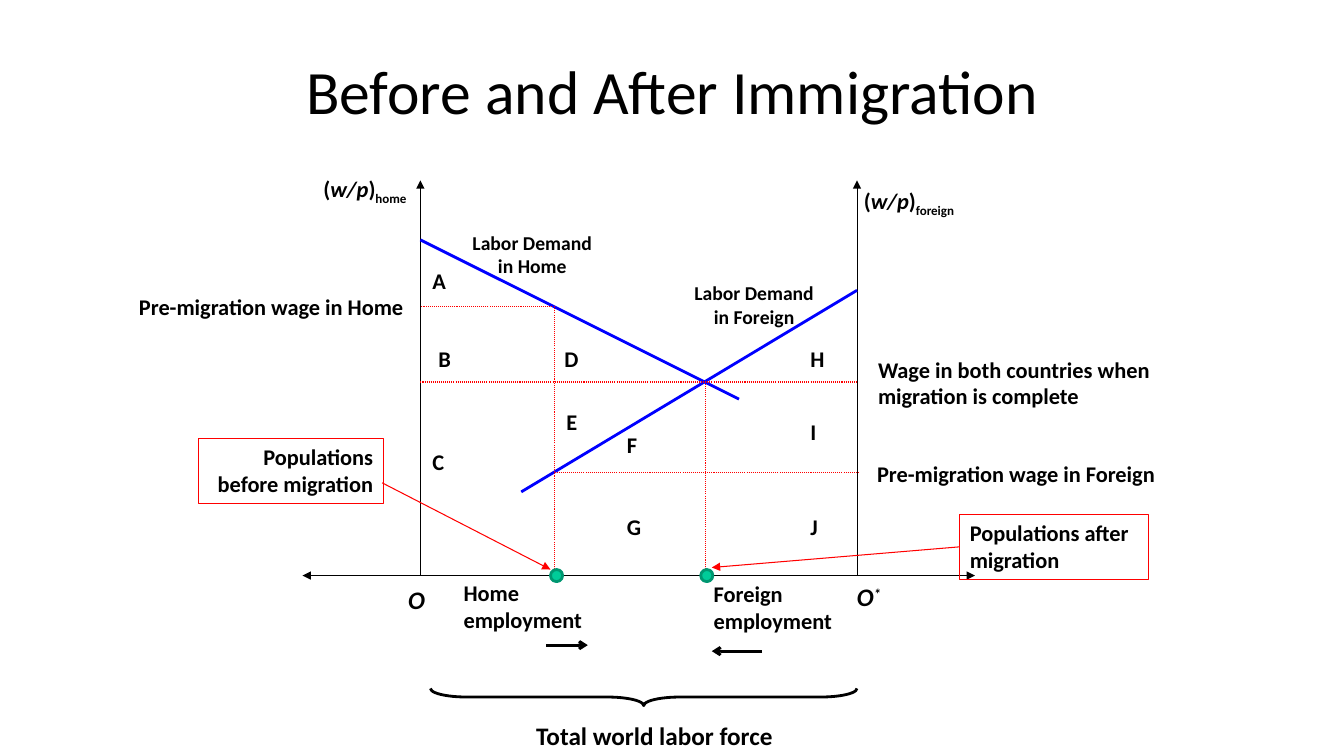
from pptx import Presentation
from pptx.dml.color import RGBColor
from pptx.enum import dml, shapes, text
from pptx.oxml import xmlchemy
from pptx.util import Inches, Pt

BLACK = RGBColor(0x00, 0x00, 0x00)
BLUE = RGBColor(0x00, 0x00, 0xFF)
RED = RGBColor(0xFF, 0x00, 0x00)
GREEN = RGBColor(0x00, 0xCC, 0x99)
DARK_GREEN = RGBColor(0x00, 0x97, 0x71)
LEFT, CENTER, RIGHT = text.PP_ALIGN.LEFT, text.PP_ALIGN.CENTER, text.PP_ALIGN.RIGHT

HOME_AXIS, FOREIGN_AXIS, BASE, AXIS_TOP = 4.17, 8.5, 5.71, 1.79
BEFORE, AFTER = 5.5, 7.0
HOME_WAGE, COMMON_WAGE, FOREIGN_WAGE = 3.04, 3.79, 4.69


class Diagram:
    font = "Calibri"

    def __init__(self, slide):
        self.shapes = slide.shapes

    def fill_text(self, sp, paragraphs, size=16, bold=True, align=LEFT, wrap=True,
                  anchor=text.MSO_ANCHOR.TOP):
        tf = sp.text_frame
        tf.word_wrap = wrap
        tf.vertical_anchor = anchor
        tf.text = "\n".join(paragraphs)
        for p in tf.paragraphs:
            p.alignment = align
            for r in p.runs:
                self.style(r, size, bold)

    def style(self, r, size, bold=True, italic=False, baseline=0):
        f = r.font
        f.name, f.size, f.bold, f.italic = self.font, Pt(size), bold, italic
        f.color.rgb = BLACK
        if baseline:
            r._r.get_or_add_rPr().set("baseline", str(baseline * 1000))

    def label(self, box, *paragraphs, **style):
        sp = self.shapes.add_textbox(*map(Inches, box))
        self.fill_text(sp, paragraphs, **style)

    def formula(self, box, parts, size=16, wrap=True):
        tf = self.shapes.add_textbox(*map(Inches, box)).text_frame
        tf.word_wrap = wrap
        p = tf.paragraphs[0]
        for content, italic, baseline in parts:
            r = p.add_run()
            r.text = content
            self.style(r, size, True, italic, baseline)

    def shape(self, kind, box, color, width=0.75, fill=None):
        sp = self.shapes.add_shape(kind, *map(Inches, box))
        sp.shadow.inherit = False
        if fill is None:
            sp.fill.background()
        else:
            sp.fill.solid()
            sp.fill.fore_color.rgb = fill
        sp.line.color.rgb = color
        sp.line.width = Pt(width)
        return sp

    def line(self, start, end, color=BLACK, width=0.75, dotted=False, head=None, tail=None):
        c = self.shapes.add_connector(shapes.MSO_CONNECTOR.STRAIGHT,
                                      *map(Inches, (*start, *end)))
        c.line.color.rgb = color
        c.line.width = Pt(width)
        if dotted:
            c.line.dash_style = dml.MSO_LINE.ROUND_DOT
        ln = c.get_or_add_ln()
        for tag, kind in (("a:headEnd", head), ("a:tailEnd", tail)):
            if kind:
                end_mark = xmlchemy.OxmlElement(tag)
                end_mark.set("type", kind)
                ln.append(end_mark)
        c._element.spPr.append(xmlchemy.OxmlElement("a:effectLst"))
        return c


def main():
    prs = Presentation()
    prs.slide_width, prs.slide_height = Inches(13.33), Inches(7.5)
    d = Diagram(prs.slides.add_slide(prs.slide_layouts[6]))

    d.label((2.42, 0.27, 8.5, 1.25), "Before and After Immigration", size=44, bold=False,
            align=CENTER, anchor=text.MSO_ANCHOR.MIDDLE)

    d.line((3, BASE), (9.67, BASE), head="triangle", tail="triangle")
    for x in (HOME_AXIS, FOREIGN_AXIS):
        d.line((x, BASE), (x, AXIS_TOP), tail="triangle")
    d.line((HOME_AXIS, 2.38), (7.33, 3.96), BLUE, 2)
    d.line((FOREIGN_AXIS, 2.88), (5.17, 4.88), BLUE, 2)
    for start, end in (
        ((AFTER, COMMON_WAGE), (AFTER, BASE)),
        ((HOME_AXIS, COMMON_WAGE), (FOREIGN_AXIS, COMMON_WAGE)),
        ((BEFORE, BASE), (BEFORE, HOME_WAGE)),
        ((BEFORE, HOME_WAGE), (HOME_AXIS, HOME_WAGE)),
        ((BEFORE, FOREIGN_WAGE), (8.52, FOREIGN_WAGE)),
    ):
        d.line(start, end, RED, dotted=True)

    d.label((4.5, 5.7, 2.17, 0.64), "Home", "employment")
    d.line((5.42, 6.4), (5.83, 6.4), width=2, tail="arrow")
    d.label((6.98, 5.71, 2.47, 0.64), "Foreign", "employment")
    d.line((7.56, 6.46), (7.06, 6.46), width=2, tail="arrow")
    d.formula((3.95, 5.75, 0.37, 0.4), [("O", True, 0)], 18, False)
    d.formula((8.4, 5.72, 0.46, 0.4), [("O", True, 0), ("*", True, 30)], 18, False)

    brace = d.shape(shapes.MSO_SHAPE.LEFT_BRACE, (6.3, 4.8, 0.17, 4.23), BLACK, 2)
    brace.rotation = 270
    brace.adjustments[0] = 2.115
    d.label((5.22, 7.1, 2.56, 0.4), "Total world labor force", size=18, wrap=False)

    for name, x, y in (
        ("A", 4.19, 2.6), ("B", 4.25, 3.38), ("C", 4.19, 4.4), ("D", 5.5, 3.38),
        ("E", 5.52, 4), ("F", 6.12, 4.23), ("G", 6.12, 5.04), ("H", 7.94, 3.38),
        ("I", 7.94, 4.1), ("J", 7.94, 5.04),
    ):
        d.label((x, y, 0.54, 0.37), name)

    before = d.shape(shapes.MSO_SHAPE.RECTANGLE, (1.97, 4.35, 1.83, 0.65), RED)
    d.fill_text(before, ["Populations before migration"], align=RIGHT)
    d.line((3.79, 4.79), (5.46, 5.65), RED, tail="triangle")
    after = d.shape(shapes.MSO_SHAPE.RECTANGLE, (9.52, 5.1, 1.87, 0.65), RED)
    d.fill_text(after, ["Populations after migration"])
    pointer = d.line((9.52, 5.42), (7.06, 5.63), RED, tail="triangle")
    pointer.begin_connect(after, 1)

    for box, country in (((3.11, 1.69, 1.13, 0.37), "home"),
                         ((8.47, 1.81, 1.17, 0.37), "foreign")):
        d.formula(box, [("(", False, 0), ("w/p", True, 0), (")", False, 0),
                        (country, False, -25)])

    d.label((0.98, 2.86, 3.12, 0.37), "Pre-migration wage in Home", align=RIGHT)
    d.label((8.6, 4.52, 3.09, 0.37), "Pre-migration wage in Foreign")
    d.label((8.61, 3.48, 3.09, 0.64), "Wage in both countries when migration is complete")
    for x, y, country in ((4.55, 2.24, "Home"), (6.75, 2.74, "Foreign")):
        d.label((x, y, 1.46, 0.57), f"Labor Demand in {country}", size=14, align=CENTER)

    for x in (5.46, 6.95):
        d.shape(shapes.MSO_SHAPE.OVAL, (x, 5.65, 0.12, 0.12), DARK_GREEN, 2, GREEN)

    prs.save("out.pptx")


if __name__ == "__main__":
    main()
